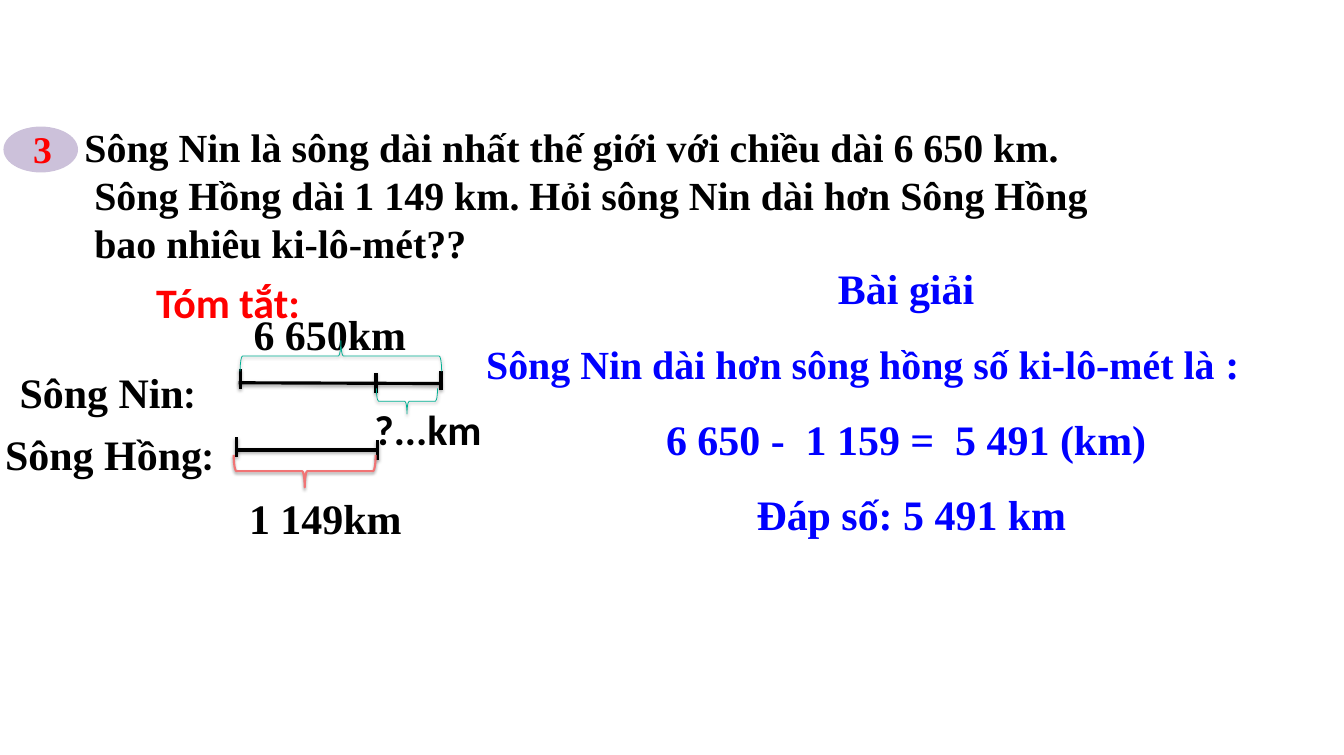
"""Builds the word-problem slide that compares the lengths of two rivers."""
from typing import NamedTuple

from lxml.etree import SubElement
from pptx import Presentation
from pptx.dml.color import RGBColor
from pptx.enum.shapes import MSO_CONNECTOR as Connector, MSO_SHAPE as Shape
from pptx.enum.text import MSO_AUTO_SIZE as AutoSize, PP_ALIGN as Align
from pptx.oxml.ns import qn
from pptx.util import Emu, Inches, Pt

BLACK = RGBColor(0x00, 0x00, 0x00)
RED = RGBColor(0xFF, 0x00, 0x00)
BLUE = RGBColor(0x00, 0x00, 0xFF)
TEAL = RGBColor(0x00, 0xAF, 0x92)
CORAL = RGBColor(0xF1, 0x74, 0x75)
LILAC = RGBColor(0xCC, 0xC1, 0xDA)
SERIF, SANS = "Times New Roman", "Calibri"
COLUMNS, ROWS = 178, 100
CELL = Inches(0.1)
TICK_ROWS = 2.6
POINT_UP, POINT_DOWN = 270, 90


class Box(NamedTuple):
    """A frame in grid columns and rows."""
    left: float
    top: float
    width: float
    height: float


class Run(NamedTuple):
    """Bold text in one font and size."""
    text: str
    font: str = SERIF
    size: float = 40


class Line(NamedTuple):
    """One paragraph, with its indent in grid columns."""
    runs: list[Run]
    align: Align | None = None
    indent: float = 0


class Label(NamedTuple):
    """A text box in one colour."""
    box: Box
    lines: list[Line]
    color: RGBColor = BLACK
    spacing: float | None = 1.5


class Segment(NamedTuple):
    """A river's length, with ticks given as column and middle row."""
    start: tuple[float, float]
    end: tuple[float, float]
    ticks: list[tuple[float, float]]


class Brace(NamedTuple):
    """A curly brace turned to point up or down."""
    box: Box
    rotation: int
    color: RGBColor
    weight: float


def caption(box: Box, *runs: Run, color: RGBColor = BLACK) -> Label:
    """Return a one-line justified label."""
    return Label(box, [Line(list(runs), Align.JUSTIFY)], color)


CAPTIONS = [
    caption(Box(19.7, 32.8, 23.2, 11.1), Run("Tóm tắt:", SANS), color=RED),
    caption(Box(1.6, 44.7, 27.9, 10), Run("Sông Nin"), Run(":", SANS)),
    caption(Box(-0.3, 53, 32.1, 10), Run("Sông Hồng"), Run(":", SANS)),
    caption(Box(32.6, 37, 26.5, 9.9), Run("6 650km")),
    caption(Box(32, 61.4, 22.8, 9.9), Run("1 149km")),
    caption(Box(48.6, 49.6, 17.1, 10), Run("?...km", SANS)),
]
SEGMENTS = [
    Segment((31.6, 50.7), (58.4, 50.8), [(31.8, 50.2), (58.4, 50.4), (49.8, 50.7)]),
    Segment((31.3, 59.6), (49.8, 59.6), [(31.3, 59.2), (50, 59.6)]),
]
BRACES = [
    Brace(Box(43.1, 33.8, 4.1, 26.7), POINT_UP, TEAL, 0.75),
    Brace(Box(52.2, 49.1, 3.4, 8.1), POINT_DOWN, TEAL, 0.75),
    Brace(Box(38.2, 53, 4.3, 18.8), POINT_DOWN, CORAL, 2),
]
BADGE = Box(0.6, 16.9, 9.6, 5.8)
NUMBER = Label(Box(3.4, 16.1, 6.8, 7.1), [Line([Run("3", size=36)])], RED, None)
QUESTION = Label(Box(10.2, 15.8, 164.1, 20.2), [
    Line([Run("Sông Nin là sông dài nhất thế giới với chiều dài 6 650 km.", size=38)]),
    Line([Run("Sông Hồng dài 1 149 km. Hỏi sông Nin dài hơn Sông Hồng", size=38)], indent=1.3),
    Line([Run("bao nhiêu ki-lô-mét??", size=38)], indent=1.3),
], spacing=None)
SOLUTION = Label(Box(63.4, 30.9, 114.6, 41.4), [
    Line([Run("Bài giải ")], Align.CENTER),
    Line([Run("Sông Nin dài hơn sông hồng số ki-lô-mét là ", size=38), Run(":")]),
    Line([Run("6 650 -  1 159 =  5 491 (km) ")], Align.CENTER),
    Line([Run("Đáp số: 5 491 km")], Align.CENTER),
], BLUE)


def grid(cells: float) -> Emu:
    """Turn grid cells into a length."""
    return Emu(round(cells * CELL))


def frame(box: Box) -> list[Emu]:
    """Turn a grid box into left, top, width and height."""
    return [grid(cells) for cells in box]


def add_shadow(drawn, opacity: int) -> None:
    """Give a shape or connector a soft shadow straight below it."""
    effects = SubElement(drawn._element.spPr, qn("a:effectLst"))
    shadow = SubElement(effects, qn("a:outerShdw"), blurRad=str(Pt(3.1)),
                        dist=str(Pt(1.7)), dir="5400000", rotWithShape="0")
    color = SubElement(shadow, qn("a:srgbClr"), val=str(BLACK))
    SubElement(color, qn("a:alpha"), val=str(opacity * 1000))


def add_label(shapes, label: Label) -> None:
    """Draw a text box run by run."""
    text = shapes.add_textbox(*frame(label.box)).text_frame
    text.word_wrap = True
    text.auto_size = AutoSize.SHAPE_TO_FIT_TEXT
    for index, line in enumerate(label.lines):
        paragraph = text.add_paragraph() if index else text.paragraphs[0]
        paragraph.alignment = line.align
        paragraph.line_spacing = label.spacing
        if line.indent:
            paragraph._p.get_or_add_pPr().set("marL", str(grid(line.indent)))
        for part in line.runs:
            run = paragraph.add_run()
            run.text = part.text
            run.font.name = part.font
            run.font.size = Pt(part.size)
            run.font.bold = True
            run.font.color.rgb = label.color


def add_stroke(shapes, start: tuple[float, float], end: tuple[float, float]) -> None:
    """Draw a thick black line between two grid points."""
    stroke = shapes.add_connector(Connector.STRAIGHT, *map(grid, start + end))
    stroke.line.color.rgb = BLACK
    stroke.line.width = Pt(3)
    add_shadow(stroke, 35)


def add_segment(shapes, segment: Segment) -> None:
    """Draw a river's length and its ticks."""
    add_stroke(shapes, segment.start, segment.end)
    for column, row in segment.ticks:
        add_stroke(shapes, (column, row + TICK_ROWS / 2), (column, row - TICK_ROWS / 2))


def add_brace(shapes, brace: Brace) -> None:
    """Draw a turned curly brace."""
    curl = shapes.add_shape(Shape.RIGHT_BRACE, *frame(brace.box))
    curl.rotation = brace.rotation
    curl.fill.background()
    curl.line.color.rgb = brace.color
    curl.line.width = Pt(brace.weight)
    add_shadow(curl, 38)


def add_problem(shapes) -> None:
    """Draw the numbered badge and the question as one group."""
    problem = shapes.add_group_shape().shapes
    badge = problem.add_shape(Shape.OVAL, *frame(BADGE))
    badge.shadow.inherit = False
    badge.fill.solid()
    badge.fill.fore_color.rgb = LILAC
    badge.line.color.rgb = LILAC
    badge.line.width = Pt(2)
    add_label(problem, NUMBER)
    add_label(problem, QUESTION)


def main() -> None:
    """Build and save the slide."""
    deck = Presentation()
    deck.slide_width, deck.slide_height = grid(COLUMNS), grid(ROWS)
    shapes = deck.slides.add_slide(deck.slide_layouts[6]).shapes
    for label in CAPTIONS:
        add_label(shapes, label)
    for segment in SEGMENTS:
        add_segment(shapes, segment)
    for brace in BRACES:
        add_brace(shapes, brace)
    add_problem(shapes)
    add_label(shapes, SOLUTION)
    deck.save("out.pptx")


if __name__ == "__main__":
    main()
